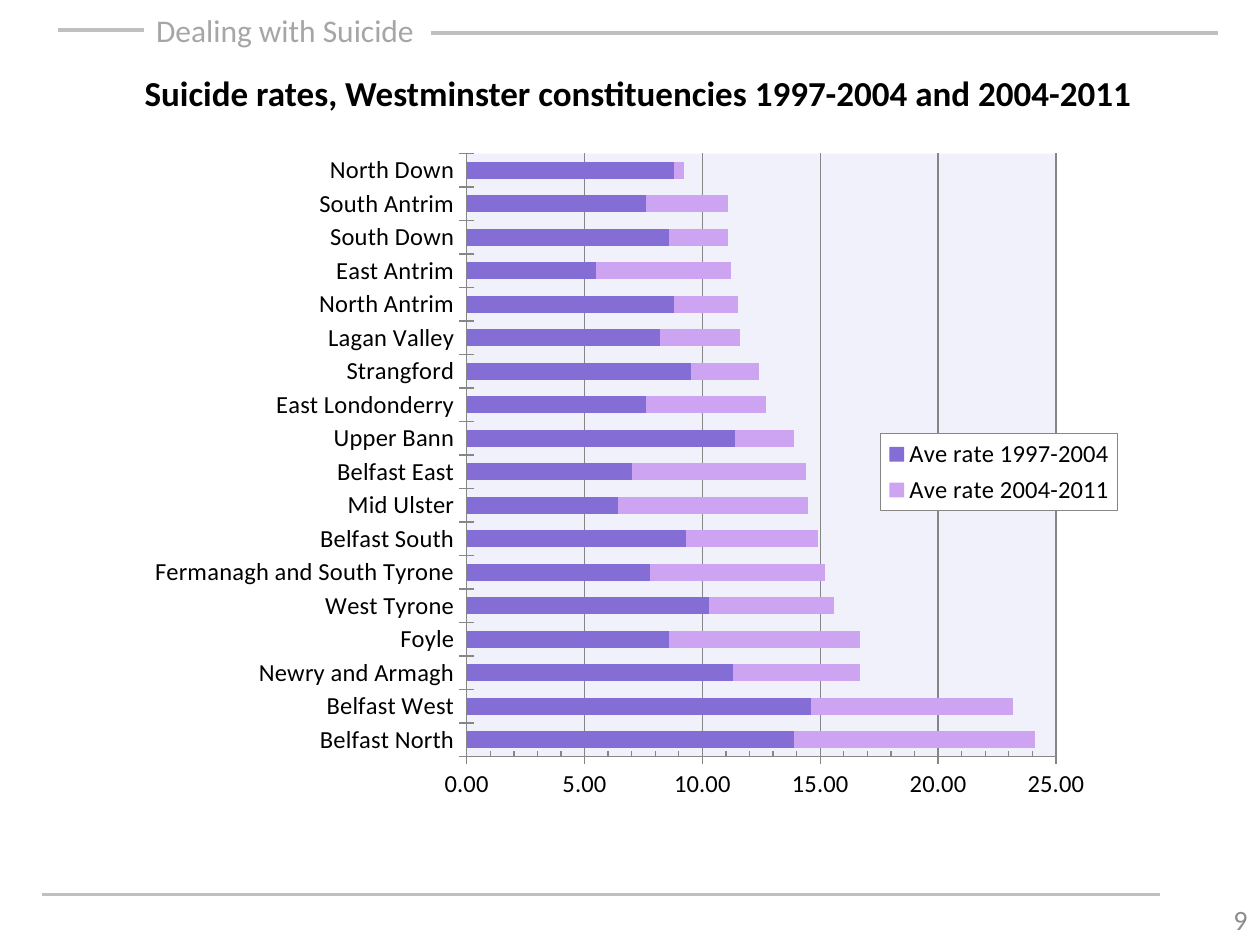
from dataclasses import dataclass

from lxml import etree
from pptx import Presentation
from pptx.chart.chart import Chart
from pptx.chart.data import CategoryChartData
from pptx.dml.color import RGBColor
from pptx.enum.chart import XL_CHART_TYPE, XL_LEGEND_POSITION, XL_TICK_MARK
from pptx.enum.shapes import MSO_CONNECTOR
from pptx.enum.text import MSO_ANCHOR, PP_ALIGN
from pptx.oxml import parse_xml
from pptx.oxml.ns import qn
from pptx.slide import Slide
from pptx.util import Inches, Pt

STRAIGHT = MSO_CONNECTOR.STRAIGHT
STACKED_BARS = XL_CHART_TYPE.BAR_STACKED
LEGEND_RIGHT = XL_LEGEND_POSITION.RIGHT
TICK_CROSS, TICK_INSIDE = XL_TICK_MARK.CROSS, XL_TICK_MARK.INSIDE
TOP, MIDDLE = MSO_ANCHOR.TOP, MSO_ANCHOR.MIDDLE
LEFT, RIGHT = PP_ALIGN.LEFT, PP_ALIGN.RIGHT

WIDTH, HEIGHT = Inches(10), Inches(7.5)
COLUMNS, ROWS = 100, 75
FONT = "Calibri"
COLORS = {
    "rule": "BFBFBF",
    "header": "A6A6A6",
    "number": "8C8C8C",
    "text": "000000",
    "axis": "868686",
    "plot": "DCDEF6",
    "white": "FFFFFF",
    "earlier": "846DD4",
    "later": "CDA4F2",
}
CHART_NS = "http://schemas.openxmlformats.org/drawingml/2006/chart"
DRAWING_NS = "http://schemas.openxmlformats.org/drawingml/2006/main"


@dataclass(frozen=True)
class Box:
    left: float
    top: float
    width: float
    height: float

    def lengths(self) -> tuple[int, int, int, int]:
        return (column(self.left), row(self.top),
                column(self.width), row(self.height))


@dataclass(frozen=True)
class Rule:
    start: float
    end: float
    row: float


@dataclass(frozen=True)
class Constituency:
    name: str
    earlier: float
    later: float


RULES = [Rule(4.6, 11.4, 2.4), Rule(34.2, 96.7, 2.6), Rule(3.3, 92.1, 71)]
CHART_BOX = Box(10.5, 10.4, 79, 54.2)
PLOT_SHARE = Box(0.336, 0.033, 0.592, 0.883)
LEGEND_SHARE = Box(0.752, 0.443, 0.238, 0.113)
CONSTITUENCIES = [
    Constituency("Belfast North", 13.9, 10.2),
    Constituency("Belfast West", 14.6, 8.6),
    Constituency("Newry and Armagh", 11.3, 5.4),
    Constituency("Foyle", 8.6, 8.1),
    Constituency("West Tyrone", 10.3, 5.3),
    Constituency("Fermanagh and South Tyrone", 7.8, 7.4),
    Constituency("Belfast South", 9.3, 5.6),
    Constituency("Mid Ulster", 6.4, 8.1),
    Constituency("Belfast East", 7, 7.4),
    Constituency("Upper Bann", 11.4, 2.5),
    Constituency("East Londonderry", 7.6, 5.1),
    Constituency("Strangford", 9.5, 2.9),
    Constituency("Lagan Valley", 8.2, 3.4),
    Constituency("North Antrim", 8.8, 2.7),
    Constituency("East Antrim", 5.5, 5.7),
    Constituency("South Down", 8.6, 2.5),
    Constituency("South Antrim", 7.6, 3.5),
    Constituency("North Down", 8.8, 0.4),
]


def column(count: float) -> int:
    return round(WIDTH * count / COLUMNS)


def row(count: float) -> int:
    return round(HEIGHT * count / ROWS)


def color(name: str) -> RGBColor:
    return RGBColor.from_string(COLORS[name])


def set_font(font, size: float, color_name: str = "text", bold: bool = False) -> None:
    font.name = FONT
    font.size = Pt(size)
    font.bold = bold
    font.color.rgb = color(color_name)


def add_text(slide: Slide, text: str, box: Box, *, size: float, color_name: str,
             bold: bool = False, align=LEFT, anchor=TOP) -> None:
    frame = slide.shapes.add_textbox(*box.lengths()).text_frame
    frame.word_wrap = True
    frame.vertical_anchor = anchor
    paragraph = frame.paragraphs[0]
    paragraph.alignment = align
    run = paragraph.add_run()
    run.text = text
    set_font(run.font, size, color_name, bold)


def add_rule(slide: Slide, rule: Rule) -> None:
    connector = slide.shapes.add_connector(
        STRAIGHT, column(rule.start), row(rule.row), column(rule.end), row(rule.row))
    connector.line.color.rgb = color("rule")
    connector.line.width = Pt(2)
    properties = connector._element.find(qn("p:spPr"))
    etree.SubElement(properties, qn("a:effectLst"))


def manual_layout(share: Box, target: str = ""):
    places = {"xMode": "edge", "yMode": "edge", "x": share.left, "y": share.top,
              "w": share.width, "h": share.height}
    if target:
        places = {"layoutTarget": target} | places
    items = "".join(f'<c:{tag} val="{value}"/>' for tag, value in places.items())
    return parse_xml(f'<c:layout xmlns:c="{CHART_NS}">'
                     f'<c:manualLayout>{items}</c:manualLayout></c:layout>')


def fill_properties(fill: str, alpha: int, line: str):
    return parse_xml(
        f'<c:spPr xmlns:c="{CHART_NS}" xmlns:a="{DRAWING_NS}">'
        f'<a:solidFill><a:srgbClr val="{fill}"><a:alpha val="{alpha * 1000}"/>'
        f'</a:srgbClr></a:solidFill><a:ln w="9525">{line}</a:ln></c:spPr>')


def style_axes(chart: Chart) -> None:
    value_axis = chart.value_axis
    value_axis.minimum_scale = 0
    value_axis.maximum_scale = 25
    value_axis.major_unit = 5
    value_axis.minor_unit = 1
    value_axis.minor_tick_mark = TICK_INSIDE
    value_axis.has_major_gridlines = True
    value_axis.tick_labels.number_format = "0.00"
    value_axis.tick_labels.number_format_is_linked = False
    grid_line = value_axis.major_gridlines.format.line
    for axis in (chart.category_axis, value_axis):
        axis.major_tick_mark = TICK_CROSS
        set_font(axis.tick_labels.font, 14)
    for line in (grid_line, value_axis.format.line, chart.category_axis.format.line):
        line.color.rgb = color("axis")
        line.width = Pt(0.75)


def style_plot(chart: Chart) -> None:
    plot = chart.plots[0]
    plot.gap_width = 100
    plot.overlap = 100
    plot.vary_by_categories = False
    for series, name in zip(plot.series, ("earlier", "later")):
        series.format.fill.solid()
        series.format.fill.fore_color.rgb = color(name)
    area = chart._chartSpace.find(f".//{qn('c:plotArea')}")
    for layout in area.findall(qn("c:layout")):
        area.remove(layout)
    area.insert(0, manual_layout(PLOT_SHARE, "inner"))
    area.append(fill_properties(COLORS["plot"], 40, "<a:noFill/>"))


def style_legend(chart: Chart) -> None:
    chart.has_legend = True
    legend = chart.legend
    legend.position = LEGEND_RIGHT
    legend.include_in_layout = True
    set_font(legend.font, 14)
    element = legend._element
    for layout in element.findall(qn("c:layout")):
        element.remove(layout)
    overlay = element.find(qn("c:overlay"))
    overlay.addprevious(manual_layout(LEGEND_SHARE))
    outline = f'<a:solidFill><a:srgbClr val="{COLORS["axis"]}"/></a:solidFill>'
    overlay.addnext(fill_properties(COLORS["white"], 100, outline))


def add_rates_chart(slide: Slide) -> None:
    data = CategoryChartData(number_format="0.00")
    data.categories = [place.name for place in CONSTITUENCIES]
    data.add_series("Ave rate 1997-2004", [place.earlier for place in CONSTITUENCIES])
    data.add_series("Ave rate 2004-2011", [place.later for place in CONSTITUENCIES])
    chart = slide.shapes.add_chart(STACKED_BARS, *CHART_BOX.lengths(), data).chart
    chart.has_title = False
    set_font(chart.font, 10)
    style_axes(chart)
    style_plot(chart)
    style_legend(chart)


def main() -> None:
    presentation = Presentation()
    presentation.slide_width, presentation.slide_height = WIDTH, HEIGHT
    slide = presentation.slides.add_slide(presentation.slide_layouts[6])
    for rule in RULES:
        add_rule(slide, rule)
    add_text(slide, "Dealing with Suicide", Box(11.4, 0.4, 25.6, 4),
             size=18, color_name="header")
    add_text(slide, "9", Box(76.7, 71, 23.3, 4), size=16, color_name="number",
             align=RIGHT, anchor=MIDDLE)
    add_rates_chart(slide)
    add_text(slide, "Suicide rates, Westminster constituencies 1997-2004 and 2004-2011",
             Box(10.5, 5.2, 84.4, 4.4), size=20, color_name="text", bold=True)
    presentation.save("out.pptx")


if __name__ == "__main__":
    main()
